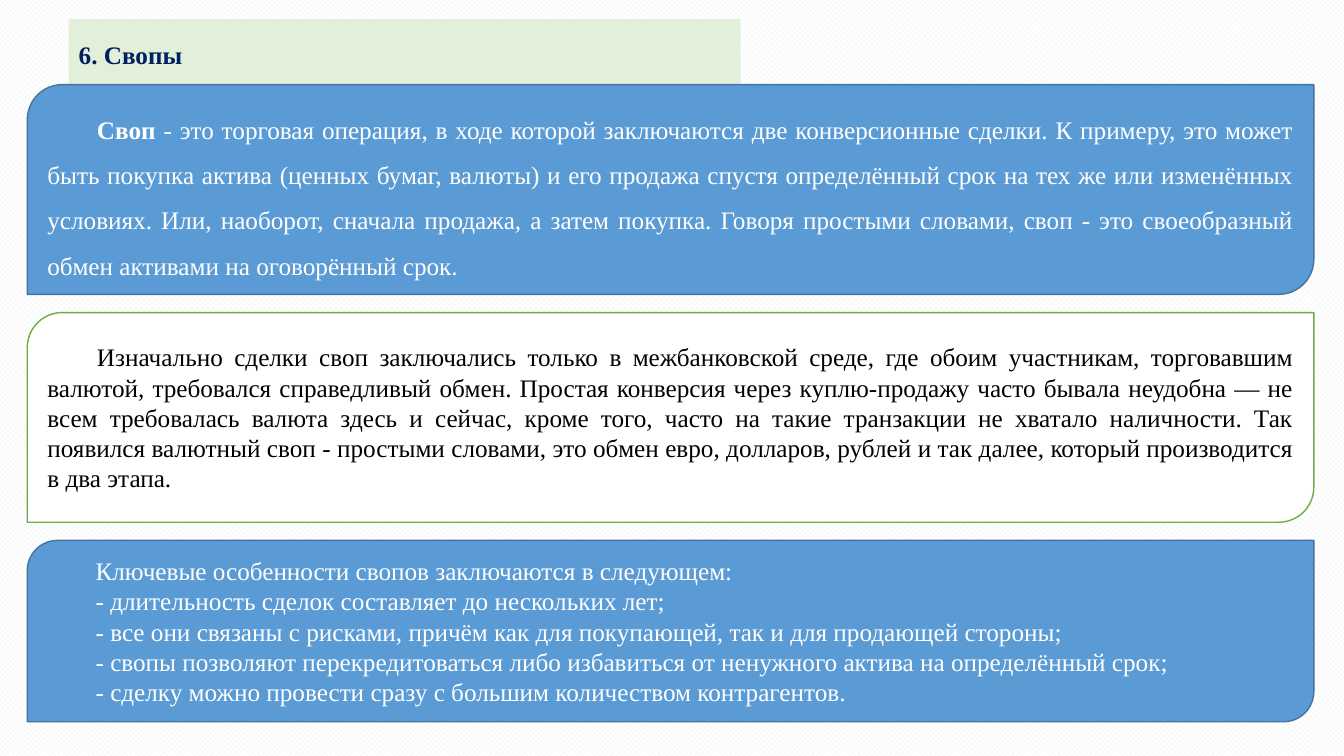
"""Build the slide on swaps: a title and three stacked text panels."""
from pptx import Presentation
from pptx.dml.color import RGBColor
from pptx.enum.dml import MSO_PATTERN
from pptx.enum.shapes import MSO_SHAPE
from pptx.enum.text import MSO_ANCHOR, MSO_AUTO_SIZE, PP_ALIGN
from pptx.util import Pt

FONT, SIZE = "Times New Roman", 18
TITLE = "6. Свопы"
TERM = "Своп"
BLUE = ("5B9BD5", "43739E", "FFFFFF")
WHITE = ("FFFFFF", "70AD47", "000000")
PANELS = [
    (BLUE, 149.75, 1.5, [
        "Своп - это торговая операция, в ходе которой заключаются две конверсионные сделки. "
        "К примеру, это может быть покупка актива (ценных бумаг, валюты) и его продажа спустя "
        "определённый срок на тех же или изменённых условиях. Или, наоборот, сначала продажа, "
        "а затем покупка. Говоря простыми словами, своп - это своеобразный обмен активами "
        "на оговорённый срок.",
    ]),
    (WHITE, 149.75, 1, [
        "Изначально сделки своп заключались только в межбанковской среде, где обоим участникам, "
        "торговавшим валютой, требовался справедливый обмен. Простая конверсия через "
        "куплю-продажу часто бывала неудобна — не всем требовалась валюта здесь и сейчас, "
        "кроме того, часто на такие транзакции не хватало наличности. Так появился валютный "
        "своп - простыми словами, это обмен евро, долларов, рублей и так далее, который "
        "производится в два этапа.",
    ]),
    (BLUE, 129.6, 1, [
        "Ключевые особенности свопов заключаются в следующем:",
        "- длительность сделок составляет до нескольких лет;",
        "- все они связаны с рисками, причём как для покупающей, так и для продающей стороны;",
        "- свопы позволяют перекредитоваться либо избавиться от ненужного актива "
        "на определённый срок;",
        "- сделку можно провести сразу с большим количеством контрагентов.",
    ]),
]
LEFT, TOP, WIDTH, GAP, INDENT = 19.5, 60.5, 919, 13, 35.4


def color(code):
    return RGBColor.from_string(code)


def paint(shape, code):
    shape.fill.solid()
    shape.fill.fore_color.rgb = color(code)


def style(par, code, space, bold=False):
    par.alignment = PP_ALIGN.JUSTIFY
    par.line_spacing = space
    par.space_after = Pt(8 if space > 1 else 0)
    for run in par.runs:
        run.font.name, run.font.size = FONT, Pt(SIZE)
        run.font.bold = bold
        run.font.color.rgb = color(code)


def add_title(slide):
    title = slide.shapes.title
    title.left, title.top, title.width, title.height = map(Pt, (49, 13.7, 480, 36.7))
    paint(title, "E2F0D9")
    frame = title.text_frame
    frame.text = TITLE
    frame.vertical_anchor = MSO_ANCHOR.TOP
    frame.auto_size = MSO_AUTO_SIZE.SHAPE_TO_FIT_TEXT
    style(frame.paragraphs[0], "002060", 1.5, True)


def add_panel(slide, top, height, colors, space, lines):
    fill, edge, ink = colors
    panel = slide.shapes.add_shape(
        MSO_SHAPE.ROUND_2_DIAG_RECTANGLE, Pt(LEFT), Pt(top), Pt(WIDTH), Pt(height))
    panel.shadow.inherit = False
    paint(panel, fill)
    panel.line.color.rgb = color(edge)
    panel.line.width = Pt(1)
    frame = panel.text_frame
    frame.word_wrap = True
    frame.vertical_anchor = MSO_ANCHOR.MIDDLE
    frame.text = "\n".join(lines)
    for par in frame.paragraphs:
        par._p.get_or_add_pPr().set("indent", str(Pt(INDENT)))
        style(par, ink, space)
    return frame


def split_term(par, ink, space):
    rest = par.text.removeprefix(TERM)
    par.runs[0].text = TERM
    par.add_run().text = rest
    style(par, ink, space)
    par.runs[0].font.bold = True


def main():
    deck = Presentation()
    deck.slide_width, deck.slide_height = Pt(960), Pt(540)
    slide = deck.slides.add_slide(deck.slide_layouts[5])
    back = slide.background.fill
    back.patterned()
    back.pattern = MSO_PATTERN.from_xml("openDmnd")
    back.fore_color.rgb = color("F2F2F2")
    back.back_color.rgb = color("FFFFFF")
    add_title(slide)
    top = TOP
    for colors, height, space, lines in PANELS:
        frame = add_panel(slide, top, height, colors, space, lines)
        if lines[0].startswith(TERM):
            split_term(frame.paragraphs[0], colors[2], space)
        top += height + GAP
    deck.save("out.pptx")


if __name__ == "__main__":
    main()
